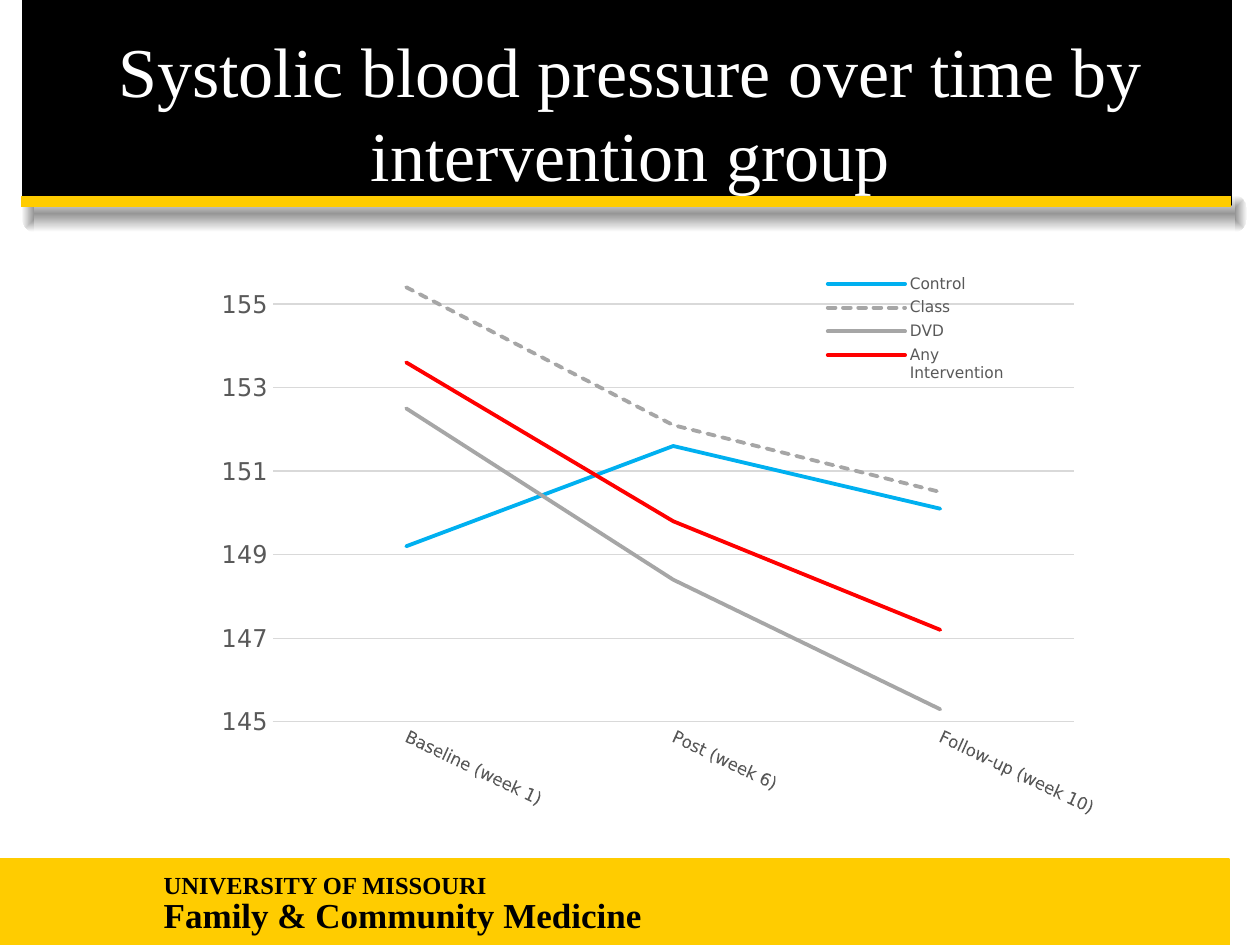
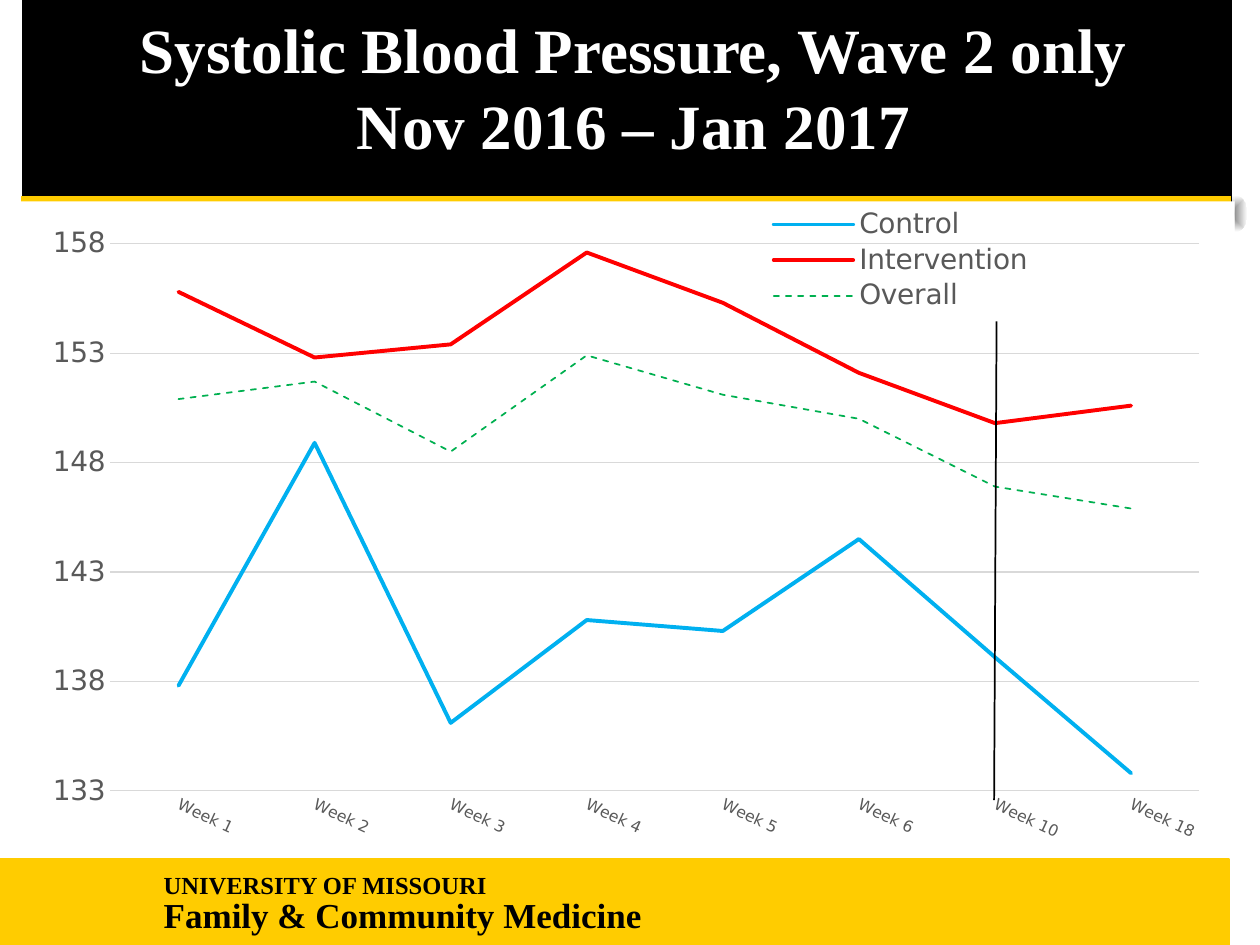
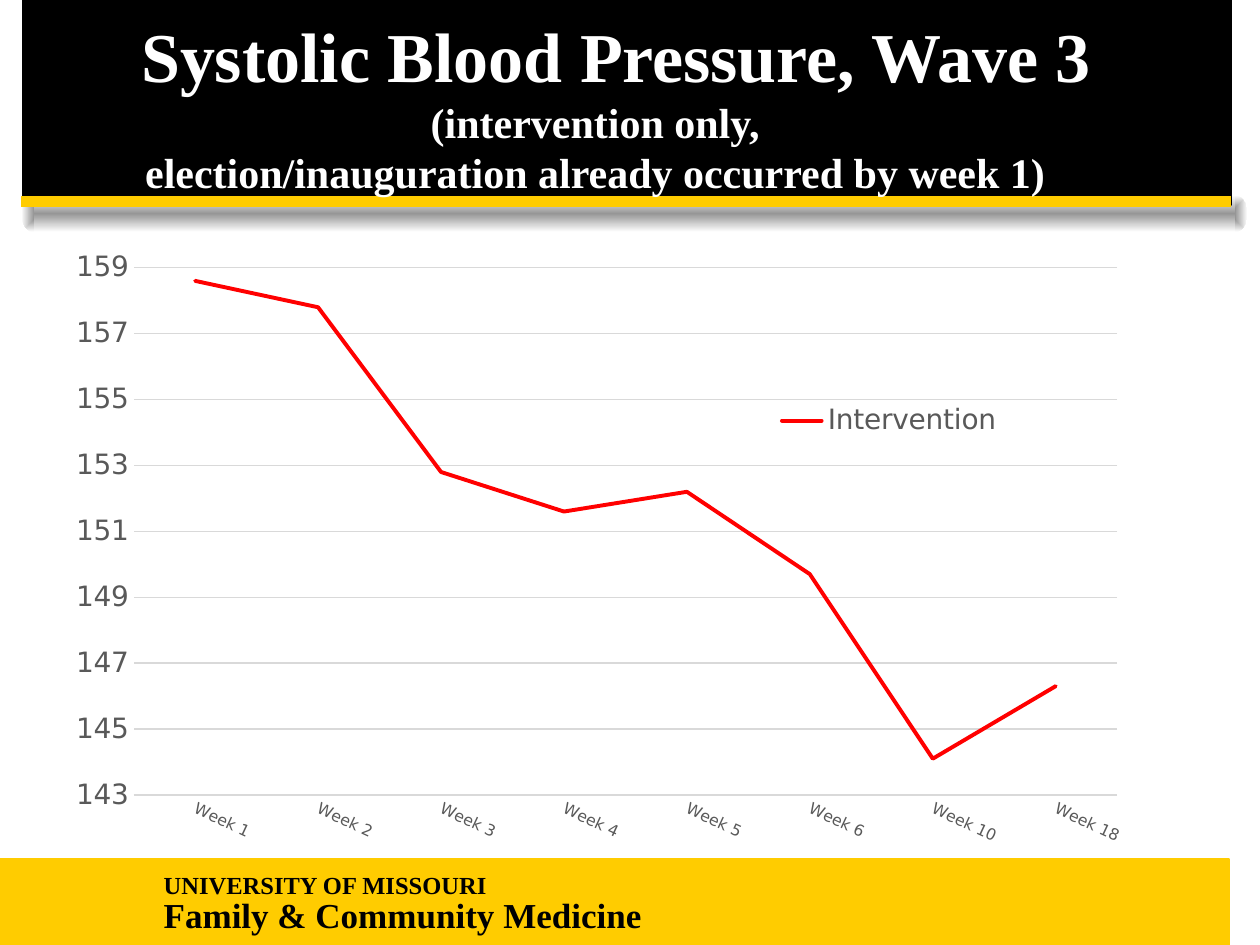
import pptx
import pptx.chart.data
import pptx.dml.color
import pptx.enum.chart
import pptx.enum.dml
import pptx.enum.shapes
import pptx.enum.text
import pptx.oxml
import pptx.oxml.ns
import pptx.util
from lxml import etree
from pptx.util import Cm, Pt

COLORS = {
    "black": "000000", "white": "FFFFFF", "gold": "FFCC00", "shadow": "969696",
    "label": "595959", "grid": "D9D9D9", "blue": "00B0F0", "gray": "A6A6A6",
    "red": "FF0000", "green": "00B050",
}
SERIF, SANS = "Times New Roman", "DejaVu Sans"
HEADER_BOX = (0.43, 0, 24.39, 4.68)
FOOTER_BOX = (0, 17.32, 24.77, 1.73)
WEEKS = [f"Week {number}" for number in (1, 2, 3, 4, 5, 6, 10, 18)]
SHAPE = pptx.enum.shapes.MSO_SHAPE
DASH = pptx.enum.dml.MSO_LINE
LEGEND = pptx.enum.chart.XL_LEGEND_POSITION
DRAWING_NS = pptx.oxml.ns.nsdecls("a")
CHART_NS = pptx.oxml.ns.nsdecls("c", "a")
qn = pptx.oxml.ns.qn


def rgb(name):
    return pptx.dml.color.RGBColor.from_string(COLORS[name])


def set_font(font, size, color, name=SANS, bold=False):
    font.size, font.name, font.bold = Pt(size), name, bold
    font.color.rgb = rgb(color)


def add_block(shapes, kind, box):
    block = shapes.add_shape(kind, *map(Cm, box))
    block.shadow.inherit = False
    return block


def add_band(page, box, color):
    band = add_block(page.shapes, SHAPE.RECTANGLE, box)
    band.fill.solid()
    band.fill.fore_color.rgb = rgb(color)
    band.line.color.rgb = rgb(color)
    band.line.width = Pt(1)


def add_gradient_block(shapes, kind, box, stops, direction):
    block = add_block(shapes, kind, box)
    stop_xml = "".join(
        f'<a:gs pos="{percent * 1000}"><a:srgbClr val="{COLORS[color]}"/></a:gs>'
        for percent, color in stops)
    block._element.spPr.append(pptx.oxml.parse_xml(
        f'<a:gradFill {DRAWING_NS} rotWithShape="1"><a:gsLst>{stop_xml}</a:gsLst>'
        f"{direction}</a:gradFill>"))
    # The fill must stay ahead of the effect list in the schema order.
    effects = block._element.spPr.find(qn("a:effectLst"))
    block._element.spPr.append(effects)
    block.line.fill.background()


def add_line(page, start, end, color, width):
    line = page.shapes.add_connector(
        pptx.enum.shapes.MSO_CONNECTOR.STRAIGHT, *map(Cm, start + end))
    line.line.color.rgb = rgb(color)
    line.line.width = Pt(width)
    etree.SubElement(line._element.spPr, qn("a:effectLst"))


def add_text(page, box, lines, color, centered=False, inset=(0, 0), bold=False):
    """Each line is (text, size, line spacing, right margin in cm)."""
    frame = page.shapes.add_textbox(*map(Cm, box)).text_frame
    frame.word_wrap = True
    frame.margin_left = frame.margin_right = Cm(inset[0])
    frame.margin_top = frame.margin_bottom = Cm(inset[1])
    if centered:
        frame.vertical_anchor = pptx.enum.text.MSO_ANCHOR.MIDDLE
    for index, (text, size, spacing, right_margin) in enumerate(lines):
        para = frame.add_paragraph() if index else frame.paragraphs[0]
        para.line_spacing = spacing
        if centered:
            para.alignment = pptx.enum.text.PP_ALIGN.CENTER
        if right_margin:
            para._p.get_or_add_pPr().set("marR", str(Cm(right_margin)))
        span = para.add_run()
        span.text = text
        set_font(span.font, size, color, SERIF, bold)


def add_header(page, box):
    """Black band with a gold rule and a soft shadow below it."""
    left, top, width, height = box
    shadow_top = top + height - 0.74
    shadow = page.shapes.add_group_shape()
    radial = ('<a:path path="shape"><a:fillToRect l="50000" t="50000" '
              'r="50000" b="50000"/></a:path>')
    for end_left in (left, left + width - 0.18):
        add_gradient_block(shadow.shapes, SHAPE.OVAL, (end_left, shadow_top, 0.51, 0.74),
                           [(0, "shadow"), (100, "white")], radial)
    add_gradient_block(shadow.shapes, SHAPE.RECTANGLE,
                       (left + 0.26, shadow_top, width - 0.18, 0.74),
                       [(0, "white"), (50, "shadow"), (100, "white")],
                       '<a:lin ang="5400000" scaled="1"/>')
    add_band(page, (left + 0.03, top, width - 0.03, height - 0.54), "black")
    rule_top = top + height - 0.62
    add_line(page, (left, rule_top), (left + width, rule_top), "gold", 6)


def add_footer(page, box):
    left, top, width, height = box
    add_band(page, box, "gold")
    add_text(page, (left + 3.3, top + 0.31, 17.45, height - 0.51),
             [("UNIVERSITY OF MISSOURI", 14, 0.85, 0),
              ("Family & Community Medicine", 20, 0.85, 0)], "black", bold=True)


def add_title(page, box, lines, bold=True):
    """Each line is (text, size) with an optional right margin in cm."""
    spaced = [(text, size, Pt(size * 1.2), sum(margin)) for text, size, *margin in lines]
    add_text(page, box, spaced, "white", centered=True, inset=(0.25, 0.13), bold=bold)


def set_layout(parent, index, area, inner=False):
    """Place a plot area or legend by fractions of the chart."""
    old = parent.find(qn("c:layout"))
    if old is not None:
        parent.remove(old)
    target = '<c:layoutTarget val="inner"/>' if inner else ""
    modes = '<c:xMode val="edge"/><c:yMode val="edge"/>'
    sizes = "".join(f'<c:{key} val="{value}"/>' for key, value in zip("xywh", area))
    parent.insert(index, pptx.oxml.parse_xml(
        f"<c:layout {CHART_NS}><c:manualLayout>{target}{modes}{sizes}"
        "</c:manualLayout></c:layout>"))


def style_axis(axis, size):
    axis.major_tick_mark = axis.minor_tick_mark = pptx.enum.chart.XL_TICK_MARK.NONE
    set_font(axis.tick_labels.font, size, "label")


def add_line_chart(page, box, categories, series, scale, plot_area, legend_area,
                   legend_position, category_size=9, value_size=16, legend_size=16):
    """Each series is (name, values, color, width, dash); scale is (min, max, step)."""
    data = pptx.chart.data.CategoryChartData()
    data.categories = categories
    for name, values, *_ in series:
        data.add_series(name, values)
    chart = page.shapes.add_chart(
        pptx.enum.chart.XL_CHART_TYPE.LINE, *map(Cm, box), data).chart
    chart.has_title = False
    set_font(chart.font, 10, "black")
    space = chart._chartSpace
    space.find(qn("c:chart")).addnext(pptx.oxml.parse_xml(
        f'<c:spPr {CHART_NS}><a:solidFill><a:srgbClr val="{COLORS["white"]}"/>'
        "</a:solidFill><a:ln><a:noFill/></a:ln></c:spPr>"))

    plot = chart.plots[0]
    plot.vary_by_categories = False
    for curve, (_, _, color, width, dash) in zip(plot.series, series):
        curve.smooth = False
        line = curve.format.line
        line.color.rgb = rgb(color)
        line.width = Pt(width)
        if dash:
            line.dash_style = dash
        line._get_or_add_ln().set("cap", "rnd")

    category_axis, value_axis = chart.category_axis, chart.value_axis
    style_axis(category_axis, category_size)
    category_axis.format.line.color.rgb = rgb("grid")
    category_axis.format.line.width = Pt(0.75)
    label_body = category_axis._element.find(qn("c:txPr")).find(qn("a:bodyPr"))
    label_body.set("rot", str(25 * 60000))
    label_body.set("vert", "horz")

    style_axis(value_axis, value_size)
    value_axis.minimum_scale, value_axis.maximum_scale, value_axis.major_unit = scale
    value_axis.format.line.fill.background()
    value_axis.has_major_gridlines = True
    value_axis.major_gridlines.format.line.color.rgb = rgb("grid")
    value_axis.major_gridlines.format.line.width = Pt(0.75)
    value_axis.tick_labels.number_format = "General"
    value_axis.tick_labels.number_format_is_linked = False

    chart.has_legend = True
    chart.legend.position = legend_position
    chart.legend.include_in_layout = False
    set_font(chart.legend.font, legend_size, "label")
    set_layout(chart.legend._element, 1, legend_area)
    set_layout(space.find(qn("c:chart")).find(qn("c:plotArea")), 0, plot_area, inner=True)


def add_page(deck):
    page = deck.slides.add_slide(deck.slide_layouts[6])
    add_header(page, HEADER_BOX)
    add_footer(page, FOOTER_BOX)
    return page


def build_group_page(deck):
    page = add_page(deck)
    add_title(page, (1.91, 0.66, 21.59, 3.18),
              [("Systolic blood pressure over time by intervention group", 40)], bold=False)
    add_line_chart(
        page, (3.94, 4.95, 18.19, 11.99),
        ["Baseline (week 1)", "Post (week 6)", "Follow-up (week 10)"],
        [("Control", (149.2, 151.6, 150.1), "blue", 2.25, None),
         ("Class", (155.4, 152.1, 150.5), "gray", 2.25, DASH.SQUARE_DOT),
         ("DVD", (152.5, 148.4, 145.3), "gray", 2.25, None),
         ("Any Intervention", (153.6, 149.8, 147.2), "red", 2.25, None)],
        (145, 156, 2), (0.088, 0.028, 0.912, 0.773), (0.715, 0.04, 0.21, 0.2),
        LEGEND.RIGHT, category_size=10, value_size=14, legend_size=9)


def build_wave_two_page(deck):
    page = add_page(deck)
    add_title(page, (0.89, -0.23, 23.75, 3.94),
              [("Systolic Blood Pressure, Wave 2 only", 36), ("Nov 2016 – Jan 2017", 36)])
    add_line_chart(
        page, (0.23, 4.06, 24.66, 13.16), WEEKS,
        [("Control", (137.8, 148.9, 136.1, 140.8, 140.3, 144.5, 139.1, 133.8),
          "blue", 2.25, None),
         ("Intervention", (155.8, 152.8, 153.4, 157.6, 155.3, 152.1, 149.8, 150.6),
          "red", 2.25, None),
         ("Overall", (150.9, 151.7, 148.5, 152.9, 151.1, 150, 146.9, 145.9),
          "green", 1, DASH.DASH)],
        (133, 158, 5), (0.081, 0.065, 0.89, 0.838), (0.617, 0.005, 0.22, 0.17),
        LEGEND.BOTTOM)
    add_line(page, (20.04, 16.13), (20.09, 6.48), "black", 1)


def build_wave_three_page(deck):
    page = add_page(deck)
    add_title(page, (-0.56, 0, 25.96, 4.22),
              [("Systolic Blood Pressure, Wave 3", 40),
               ("(intervention only,", 24, 0.84),
               ("election/inauguration already occurred by week 1)", 24)])
    add_line_chart(
        page, (0.89, 4.72, 22.28, 12.55), WEEKS,
        [("Intervention", (158.6, 157.8, 152.8, 151.6, 152.2, 149.7, 144.1, 146.3),
          "red", 2.25, None)],
        (143, 159, 2), (0.081, 0.054, 0.89, 0.847), (0.662, 0.272, 0.205, 0.055),
        LEGEND.TOP)


def main():
    deck = pptx.Presentation()
    deck.slide_width, deck.slide_height = Cm(25.4), Cm(19.05)
    build_group_page(deck)
    build_wave_two_page(deck)
    build_wave_three_page(deck)
    deck.save("out.pptx")


if __name__ == "__main__":
    main()
